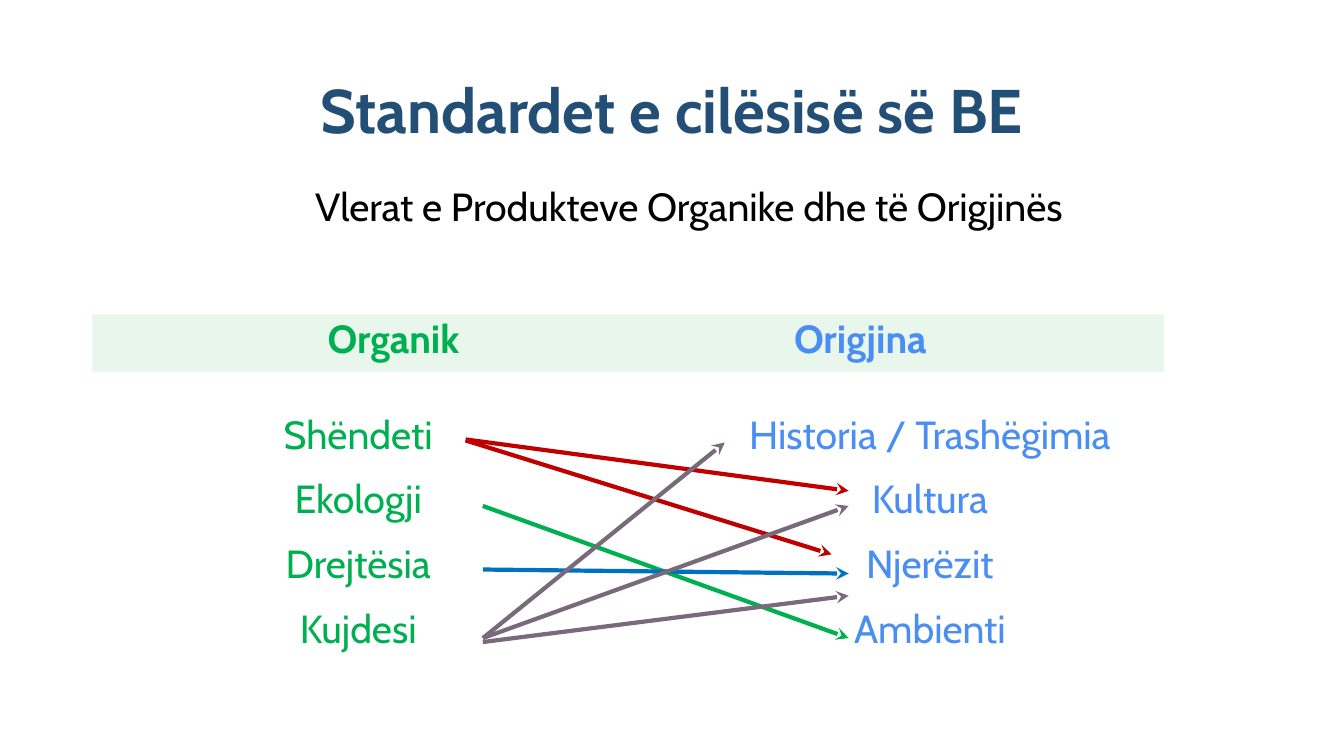
"""Build the slide that links organic values with origin values."""
from lxml import etree
from pptx import Presentation
from pptx.dml.color import RGBColor
from pptx.enum import shapes, text
from pptx.oxml import ns
from pptx.util import Pt

FONT = "Cabin"
NAVY = RGBColor(0x23, 0x4F, 0x77)
BLACK = RGBColor(0, 0, 0)
GREEN = RGBColor(0x00, 0xB0, 0x50)
SKY = RGBColor(0x4A, 0x8E, 0xF2)
MINT = RGBColor(0xE0, 0xF4, 0xE5)
RED = RGBColor(0xC0, 0x00, 0x00)
BLUE = RGBColor(0x00, 0x70, 0xC0)
MAUVE = RGBColor(0x78, 0x69, 0x7B)

ORGANIC_VALUES = ["Shëndeti", "Ekologji", "Drejtësia", "Kujdesi"]
ORIGIN_VALUES = ["Historia / Trashëgimia", "Kultura", "Njerëzit", "Ambienti"]
ARROWS = [
    (RED, (332.6, 313.9), (606.2, 350.6)),
    (RED, (332.6, 314.6), (594, 396)),
    (GREEN, (344.9, 361.4), (606.2, 455.8)),
    (BLUE, (344.9, 406.8), (606.2, 409.7)),
    (MAUVE, (344.9, 455.8), (517.7, 316.1)),
    (MAUVE, (344.9, 455.8), (606.2, 361.4)),
    (MAUVE, (344.9, 458.6), (606.2, 425.5)),
]


def add_child(parent, tag, **attributes):
    """Append a DrawingML element and return it."""
    return etree.SubElement(parent, ns.qn(tag), attributes)


def add_run(paragraph, content, color, size=28, bold=False):
    """Add one formatted run to a paragraph."""
    run = paragraph.add_run()
    run.text = content
    run.font.name = FONT
    run.font.size = Pt(size)
    run.font.bold = bold
    run.font.color.rgb = color


def set_title(slide, content):
    """Place and format the title placeholder."""
    title = slide.shapes.title
    title.left, title.top, title.width, title.height = Pt(66), Pt(29), Pt(828), Pt(104)
    title.text_frame.vertical_anchor = text.MSO_ANCHOR.MIDDLE
    paragraph = title.text_frame.paragraphs[0]
    paragraph.alignment = text.PP_ALIGN.CENTER
    paragraph.line_spacing = 0.9
    add_run(paragraph, content, NAVY, 44, True)


def add_lines(slide, box, lines, color):
    """Add a text box with one centred paragraph per line."""
    frame = slide.shapes.add_textbox(*map(Pt, box)).text_frame
    frame.word_wrap = True
    for index, line in enumerate(lines):
        paragraph = frame.add_paragraph() if index else frame.paragraphs[0]
        paragraph.alignment = text.PP_ALIGN.CENTER
        paragraph.line_spacing = 0.9
        paragraph.space_before = Pt(10 if index else 0)
        paragraph.space_after = Pt(6)
        add_run(paragraph, line, color)


def add_heading_band(slide, box, headings):
    """Add the tinted band with each heading centred on a tab stop."""
    band = slide.shapes.add_shape(shapes.MSO_SHAPE.RECTANGLE, *map(Pt, box))
    band.shadow.inherit = False
    band.fill.solid()
    band.fill.fore_color.rgb = MINT
    add_child(band.fill._xPr.find(".//" + ns.qn("a:srgbClr")), "a:alpha", val="73000")
    band.line.fill.background()
    band.text_frame.vertical_anchor = text.MSO_ANCHOR.TOP
    paragraph = band.text_frame.paragraphs[0]
    paragraph.alignment = text.PP_ALIGN.LEFT
    paragraph.line_spacing = 0.9
    tabs = add_child(paragraph._p.get_or_add_pPr(), "a:tabLst")
    for content, color, center in headings:
        add_child(tabs, "a:tab", pos=str(Pt(center)), algn="ctr")
        add_run(paragraph, "\t" + content, color, bold=True)


def add_arrow(slide, color, start, end):
    """Add a straight arrow with a stealth head."""
    arrow = slide.shapes.add_connector(
        shapes.MSO_CONNECTOR.STRAIGHT, *map(Pt, start + end))
    arrow.line.color.rgb = color
    arrow.line.width = Pt(3)
    add_child(arrow.line._get_or_add_ln(), "a:tailEnd", type="stealth")
    add_child(arrow._element.spPr, "a:effectLst")


def main():
    """Build and save the presentation."""
    presentation = Presentation()
    presentation.slide_width, presentation.slide_height = Pt(960), Pt(540)
    slide = presentation.slides.add_slide(presentation.slide_layouts[5])
    set_title(slide, "Standardet e cilësisë së BE")
    add_heading_band(slide, (66, 224.6, 765.4, 41),
                     [("Organik", GREEN, 208), ("Origjina", SKY, 541.5)])
    add_lines(slide, (78, 130.3, 828, 46),
              ["Vlerat e Produkteve Organike dhe të Origjinës"], BLACK)
    add_lines(slide, (123, 293, 265.7, 195), ORGANIC_VALUES, GREEN)
    add_lines(slide, (517.7, 293, 293, 195), ORIGIN_VALUES, SKY)
    for color, start, end in ARROWS:
        add_arrow(slide, color, start, end)
    presentation.save("out.pptx")


if __name__ == "__main__":
    main()
